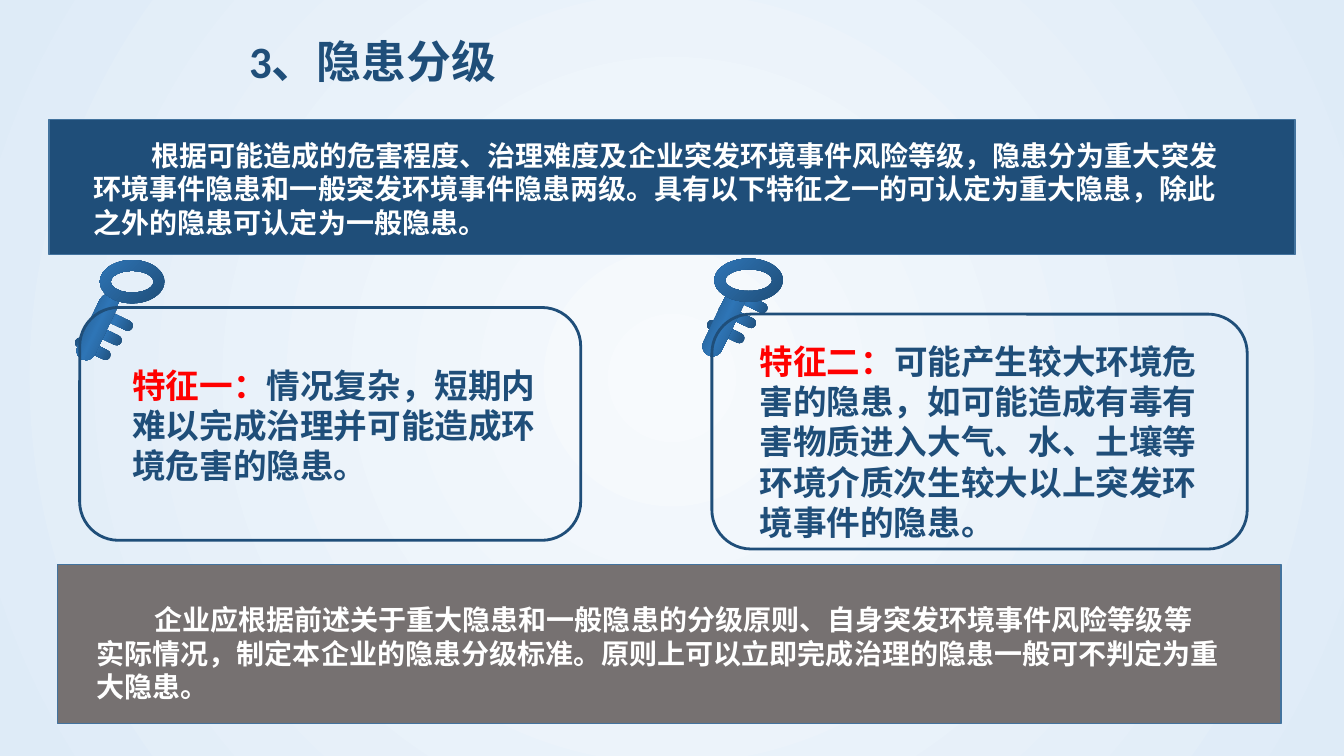
from dataclasses import dataclass

import pptx
import pptx.dml.color
import pptx.enum.shapes
import pptx.enum.text
import pptx.oxml
import pptx.oxml.ns
import pptx.util

WIDTH = pptx.util.Inches(13.33)
HEIGHT = pptx.util.Inches(7.5)
COLUMN = WIDTH / 100
ROW = HEIGHT / 100
FONT = "Calibri"
NAVY, BLUE, RED, WHITE = "1F4E79", "2E75B6", "FF0000", "FFFFFF"
PALE, SKY, GRAY, EDGE = "F7FAFD", "DEEBF7", "767171", "43739E"
KEY_TILT = 25.6
TOOTH_COUNT = 3
RING_THICKNESS = 0.25
FIRST_LINE_INDENT = 4.28
LINEAR = '<a:lin {} ang="{}" scaled="0"/>'
RADIAL = ('<a:path {} path="circle"><a:fillToRect l="50000" t="50000" '
          'r="50000" b="50000"/></a:path>')
Shapes = pptx.enum.shapes.MSO_SHAPE


@dataclass(frozen=True)
class Box:
    column: float
    row: float
    columns: float
    rows: float

    def lengths(self) -> tuple[int, int, int, int]:
        return (round(self.column * COLUMN), round(self.row * ROW),
                round(self.columns * COLUMN), round(self.rows * ROW))


@dataclass(frozen=True)
class Words:
    text: str
    size: int
    color: str


@dataclass(frozen=True)
class Key:
    ring: Box
    shaft: Box
    tooth: Box
    step_columns: float
    step_rows: float


@dataclass(frozen=True)
class Card:
    key: Key
    frame: Box
    text_box: Box
    label: str
    body: str


@dataclass(frozen=True)
class Banner:
    frame: Box
    text_box: Box
    color: str
    body: str


TITLE_BOX = Box(17.78, 3.8, 53.55, 8.53)

CARDS = (
    Card(Key(Box(7.43, 34.4, 4.8, 5.73), Box(6.53, 38.53, 1.43, 9.47),
             Box(5.48, 45.47, 2.85, 1.33), 0.83, -1.93),
         Box(5.93, 40.67, 37.28, 30.8), Box(9.1, 47.55, 33.08, 17.47),
         "特征一：", "情况复杂，短期内难以完成治理并可能造成环境危害的隐患。"),
    Card(Key(Box(53.15, 34.2, 5.1, 5.73), Box(53.1, 38, 1.5, 9.47),
             Box(52.5, 43.2, 3, 1.33), 0.86, -2),
         Box(52.97, 41.55, 39.83, 31.07), Box(55.78, 44.4, 35.33, 28.27),
         "特征二：",
         "可能产生较大环境危害的隐患，如可能造成有毒有害物质进入大气、水、土壤等"
         "环境介质次生较大以上突发环境事件的隐患。"),
)

BANNERS = (
    Banner(Box(3.65, 15.82, 92.7, 17.87), Box(6.23, 17.6, 85.95, 14.8), NAVY,
           "根据可能造成的危害程度、治理难度及企业突发环境事件风险等级，隐患分为重大突发"
           "环境事件隐患和一般突发环境事件隐患两级。具有以下特征之一的可认定为重大隐患，"
           "除此之外的隐患可认定为一般隐患。"),
    Banner(Box(4.28, 74.67, 91.05, 21.07), Box(6.45, 79.07, 85.07, 14.8), GRAY,
           "企业应根据前述关于重大隐患和一般隐患的分级原则、自身突发环境事件风险等级等"
           "实际情况，制定本企业的隐患分级标准。原则上可以立即完成治理的隐患一般可不判定"
           "为重大隐患。"),
)


def rgb(color: str) -> pptx.dml.color.RGBColor:
    return pptx.dml.color.RGBColor.from_string(color)


def fill_gradient(fill, element, colors: tuple[str, ...], direction: str) -> None:
    fill.gradient()
    gradient = next(element.iter(pptx.oxml.ns.qn("a:gradFill")))
    for child in list(gradient):
        gradient.remove(child)
    stops = "".join(
        f'<a:gs pos="{round(100000 * index / (len(colors) - 1))}">'
        f'<a:srgbClr val="{color}"/></a:gs>'
        for index, color in enumerate(colors))
    namespace = pptx.oxml.ns.nsdecls("a")
    gradient.append(pptx.oxml.parse_xml(f"<a:gsLst {namespace}>{stops}</a:gsLst>"))
    gradient.append(pptx.oxml.parse_xml(direction))


def write(shape, words: tuple[Words, ...], indent: float = 0) -> None:
    frame = shape.text_frame
    frame.word_wrap = True
    frame.vertical_anchor = pptx.enum.text.MSO_ANCHOR.TOP
    paragraph = frame.paragraphs[0]
    paragraph.alignment = pptx.enum.text.PP_ALIGN.LEFT
    if indent:
        properties = paragraph._p.get_or_add_pPr()
        properties.set("marL", "0")
        properties.set("indent", str(round(indent * COLUMN)))
    for part in words:
        run = paragraph.add_run()
        run.text = part.text
        run.font.name = FONT
        run.font.size = pptx.util.Pt(part.size)
        run.font.bold = True
        run.font.color.rgb = rgb(part.color)


def draw_frame(slide, kind, box: Box, fill: str, line: str, weight: float) -> None:
    shape = slide.shapes.add_shape(kind, *box.lengths())
    shape.shadow.inherit = False
    if fill:
        shape.fill.solid()
        shape.fill.fore_color.rgb = rgb(fill)
    else:
        shape.fill.background()
    shape.line.color.rgb = rgb(line)
    shape.line.width = pptx.util.Pt(weight)


def draw_key_part(slide, kind, box: Box, adjustment: float, tilt: float,
                  colors: tuple[str, ...], degrees: int) -> None:
    part = slide.shapes.add_shape(kind, *box.lengths())
    part.adjustments[0] = adjustment
    part.rotation = tilt
    part.shadow.inherit = False
    part.line.fill.background()
    direction = LINEAR.format(pptx.oxml.ns.nsdecls("a"), degrees * 60000)
    fill_gradient(part.fill, part.element, colors, direction)


def draw_key(slide, key: Key) -> None:
    teeth = [Box(key.tooth.column + index * key.step_columns,
                 key.tooth.row + index * key.step_rows,
                 key.tooth.columns, key.tooth.rows)
             for index in range(TOOTH_COUNT)]
    for bar in (*teeth, key.shaft):
        draw_key_part(slide, Shapes.ROUNDED_RECTANGLE, bar, 0.5, KEY_TILT,
                      (NAVY, BLUE, NAVY), 0)
    draw_key_part(slide, Shapes.DONUT, key.ring, RING_THICKNESS, 0,
                  (NAVY, BLUE), 225)


def main() -> None:
    presentation = pptx.Presentation()
    presentation.slide_width, presentation.slide_height = WIDTH, HEIGHT
    slide = presentation.slides.add_slide(presentation.slide_layouts[5])
    fill_gradient(slide.background.fill, slide.element, (PALE, SKY),
                  RADIAL.format(pptx.oxml.ns.nsdecls("a")))
    title = slide.shapes.title
    title.left, title.top, title.width, title.height = TITLE_BOX.lengths()
    write(title, (Words("3、隐患分级", 32, NAVY),))
    for card in CARDS:
        draw_key(slide, card.key)
        draw_frame(slide, Shapes.ROUNDED_RECTANGLE, card.frame, "", NAVY, 2)
        write(slide.shapes.add_textbox(*card.text_box.lengths()),
              (Words(card.label, 24, RED), Words(card.body, 24, NAVY)))
    for banner in BANNERS:
        draw_frame(slide, Shapes.RECTANGLE, banner.frame, banner.color, EDGE, 1)
        write(slide.shapes.add_textbox(*banner.text_box.lengths()),
              (Words(banner.body, 20, WHITE),), FIRST_LINE_INDENT)
    presentation.save("out.pptx")


if __name__ == "__main__":
    main()
